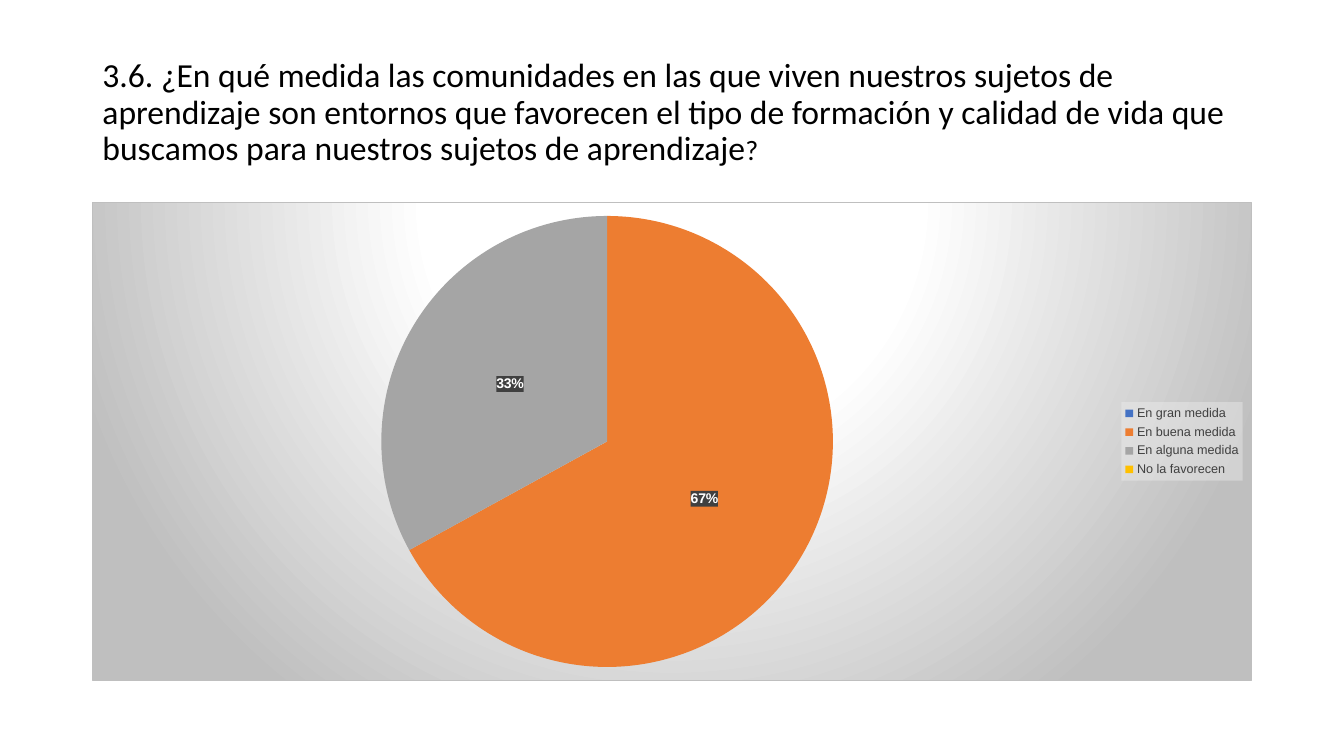
from pptx import Presentation
from pptx import util as u
from pptx.chart.data import CategoryChartData
from pptx.dml.color import RGBColor
from pptx.enum import chart as charts, text
from pptx.oxml import parse_xml
from pptx.oxml.ns import nsdecls

BLACK = RGBColor(0x00, 0x00, 0x00)
WHITE = RGBColor(0xFF, 0xFF, 0xFF)
DARK = RGBColor(0x40, 0x40, 0x40)
SILVER = RGBColor(0xBF, 0xBF, 0xBF)
PALE = RGBColor(0xF2, 0xF2, 0xF2)
BLUE = RGBColor(0x44, 0x72, 0xC4)
ORANGE = RGBColor(0xED, 0x7D, 0x31)
GRAY = RGBColor(0xA5, 0xA5, 0xA5)
GOLD = RGBColor(0xFF, 0xC0, 0x00)

ANSWERS = [
    ("En gran medida", 0, BLUE),
    ("En buena medida", 67, ORANGE),
    ("En alguna medida", 33, GRAY),
    ("No la favorecen", 0, GOLD),
]
QUESTION = (
    "3.6. ¿En qué medida las comunidades en las que viven nuestros sujetos de "
    "aprendizaje son entornos que favorecen el tipo de formación y calidad de vida "
    "que buscamos para nuestros sujetos de aprendizaje"
)


def style_font(font, name="Arial", size=10, color=BLACK, bold=False):
    font.name = name
    font.size = u.Pt(size)
    font.bold = bold
    font.color.rgb = color


def add_text(paragraph, content, **style):
    run = paragraph.add_run()
    run.text = content
    style_font(run.font, **style)


def set_background(chart, owner, paint):
    text_properties = chart.element.xpath(f"{owner}/c:txPr")[0]
    text_properties.addprevious(
        parse_xml(f'<c:spPr {nsdecls("c", "a")}>{paint}</c:spPr>')
    )


def translucent(color, opacity):
    return (
        f'<a:solidFill><a:srgbClr val="{color}">'
        f'<a:alpha val="{opacity * 1000}"/></a:srgbClr></a:solidFill>'
    )


def radial_background():
    stops = "".join(
        f'<a:gs pos="{position * 1000}"><a:srgbClr val="{color}"/></a:gs>'
        for position, color in [(0, WHITE), (39, WHITE), (100, SILVER)]
    )
    return (
        f'<a:gradFill><a:gsLst>{stops}</a:gsLst><a:path path="circle">'
        '<a:fillToRect l="50000" t="-80000" r="50000" b="180000"/></a:path></a:gradFill>'
        f'<a:ln w="{u.Pt(0.75)}"><a:solidFill><a:srgbClr val="{SILVER}"/>'
        "</a:solidFill></a:ln>"
    )


def place_question(slide, left, top, width, height):
    question = slide.shapes.title
    question.left, question.top = u.Pt(left), u.Pt(top)
    question.width, question.height = u.Pt(width), u.Pt(height)
    frame = question.text_frame
    frame.word_wrap = True
    frame.auto_size = text.MSO_AUTO_SIZE.NONE
    frame.vertical_anchor = text.MSO_ANCHOR.MIDDLE
    paragraph = frame.paragraphs[0]
    paragraph.alignment = text.PP_ALIGN.LEFT
    paragraph.line_spacing = 0.9
    add_text(paragraph, QUESTION, name="Calibri", size=24)
    add_text(paragraph, "?", name="Calibri", size=20)


def label_shares(chart):
    labels = chart.plots[0].series[0].data_labels
    style_font(labels.font, color=WHITE, bold=True)
    labels.number_format = "0%"
    labels.number_format_is_linked = False
    labels.show_value = False
    labels.show_percentage = True
    labels.position = charts.XL_LABEL_POSITION.CENTER
    set_background(chart, ".//c:ser/c:dLbls", translucent(DARK, 90))
    label_list = chart.element.xpath(".//c:ser/c:dLbls")[0]
    empty_slices = [i for i, (_, share, _) in enumerate(ANSWERS) if share == 0]
    for position, index in enumerate(empty_slices):
        label_list.insert(position, parse_xml(
            f'<c:dLbl {nsdecls("c")}><c:idx val="{index}"/><c:delete val="1"/></c:dLbl>'
        ))


def place_answers(slide, left, top, width, height):
    data = CategoryChartData()
    data.categories = [answer for answer, _, _ in ANSWERS]
    data.add_series("Series 1", [share for _, share, _ in ANSWERS])
    chart = slide.shapes.add_chart(
        charts.XL_CHART_TYPE.PIE,
        u.Pt(left), u.Pt(top), u.Pt(width), u.Pt(height), data,
    ).chart
    chart.has_title = False
    style_font(chart.font)
    set_background(chart, ".", radial_background())

    chart.plots[0].vary_by_categories = True
    shares = chart.plots[0].series[0]
    for index, (_, _, color) in enumerate(ANSWERS):
        fill = shares.points[index].format.fill
        fill.solid()
        fill.fore_color.rgb = color
    label_shares(chart)

    chart.has_legend = True
    chart.legend.position = charts.XL_LEGEND_POSITION.RIGHT
    chart.legend.include_in_layout = False
    style_font(chart.legend.font, size=9, color=DARK)
    set_background(chart, ".//c:legend", translucent(PALE, 39))


def main():
    deck = Presentation()
    deck.slide_width, deck.slide_height = u.Pt(960), u.Pt(540)
    slide = deck.slides.add_slide(deck.slide_layouts[5])
    place_question(slide, 66, 28.75, 828, 104.4)
    place_answers(slide, 66, 144, 828, 342.7)
    deck.save("out.pptx")


if __name__ == "__main__":
    main()
